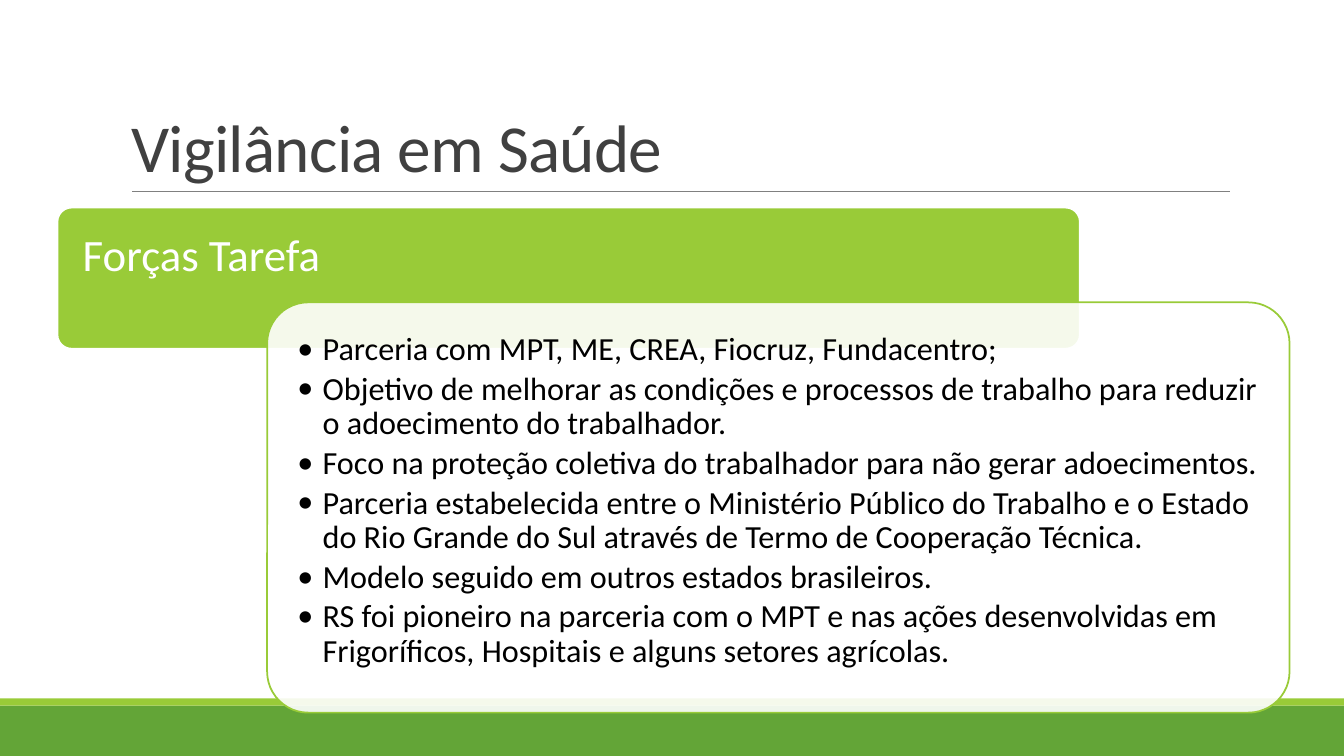
from lxml import etree
from pptx import Presentation
from pptx.dml.color import RGBColor
from pptx.enum.shapes import MSO_CONNECTOR, MSO_SHAPE
from pptx.enum.text import MSO_ANCHOR, MSO_AUTO_SIZE, PP_ALIGN
from pptx.oxml.ns import qn
from pptx.util import Inches, Pt

RECT, ROUNDED = MSO_SHAPE.RECTANGLE, MSO_SHAPE.ROUNDED_RECTANGLE
STRAIGHT = MSO_CONNECTOR.STRAIGHT
TOP, BOTTOM = MSO_ANCHOR.TOP, MSO_ANCHOR.BOTTOM
LEFT, NO_FIT = PP_ALIGN.LEFT, MSO_AUTO_SIZE.NONE

DARK_GREEN = RGBColor(0x63, 0xA5, 0x37)
GREEN = RGBColor(0x99, 0xCB, 0x38)
WHITE = RGBColor(0xFF, 0xFF, 0xFF)
BLACK = RGBColor(0, 0, 0)
CHARCOAL = RGBColor(0x40, 0x40, 0x40)
GREY = RGBColor(0x80, 0x80, 0x80)

SLIDE_W, SLIDE_H = 13.33, 7.5
FONT = "Calibri"
ACTIONS = [
    "Parceria com MPT, ME, CREA, Fiocruz, Fundacentro;",
    "Objetivo de melhorar as condições e processos de trabalho para reduzir "
    "o adoecimento do trabalhador.",
    "Foco na proteção coletiva do trabalhador para não gerar adoecimentos.",
    "Parceria estabelecida entre o Ministério Público do Trabalho e o Estado "
    "do Rio Grande do Sul através de Termo de Cooperação Técnica.",
    "Modelo seguido em outros estados brasileiros.",
    "RS foi pioneiro na parceria com o MPT e nas ações desenvolvidas em "
    "Frigoríficos, Hospitais e alguns setores agrícolas.",
]


def add_bullet(p, indent):
    pPr = p._p.get_or_add_pPr()
    pPr.set("marL", str(Inches(indent)))
    pPr.set("indent", str(-Inches(indent)))
    etree.SubElement(pPr, qn("a:buFont")).set("typeface", FONT)
    etree.SubElement(pPr, qn("a:buChar")).set("char", "•")


def write(sp, paragraphs, *, size, color, insets, anchor=TOP, line=0.9,
          after=0, bullet_indent=0, tracking=0):
    tf = sp.text_frame
    tf.word_wrap, tf.auto_size, tf.vertical_anchor = True, NO_FIT, anchor
    (tf.margin_left, tf.margin_top,
     tf.margin_right, tf.margin_bottom) = map(Inches, insets)
    for i, text in enumerate(paragraphs):
        p = tf.add_paragraph() if i else tf.paragraphs[0]
        if bullet_indent:
            add_bullet(p, bullet_indent)
        p.alignment, p.line_spacing = LEFT, line
        p.space_before, p.space_after = Pt(0), Pt(after)
        r = p.add_run()
        r.text = text
        r.font.name, r.font.size = FONT, Pt(size)
        r.font.color.rgb = color
        if tracking:
            r._r.get_or_add_rPr().set("spc", str(int(tracking * 100)))


def add_panel(s, kind, box, fill, line=None, alpha=None):
    sp = s.shapes.add_shape(kind, *map(Inches, box))
    sp.shadow.inherit = False
    sp.fill.solid()
    sp.fill.fore_color.rgb = fill
    if alpha is not None:
        color = sp.fill._xPr.find(".//" + qn("a:srgbClr"))
        etree.SubElement(color, qn("a:alpha")).set("val", str(alpha * 1000))
    if kind == ROUNDED:
        sp.adjustments[0] = 0.1
    if line is None:
        sp.line.fill.background()
    else:
        sp.line.color.rgb = line
        sp.line.width = Pt(1.25)


def add_text(s, box, paragraphs, **fmt):
    write(s.shapes.add_textbox(*map(Inches, box)), paragraphs, **fmt)


def add_footer_bands(s, top):
    stripe = 0.07
    add_panel(s, RECT, (0, top, SLIDE_W, SLIDE_H - top), DARK_GREEN)
    add_panel(s, RECT, (0, top - stripe, SLIDE_W, stripe), GREEN)


def add_title(s, box, text):
    x, y, w, h = box
    title = s.shapes.title
    title.left, title.top, title.width, title.height = map(Inches, box)
    write(title, [text], size=48, color=CHARCOAL, anchor=BOTTOM, line=0.85,
          insets=(0.1, 0.05, 0.1, 0.05), tracking=-0.5)
    # Rule under the title
    rule = s.shapes.add_connector(STRAIGHT, Inches(x + 0.11), Inches(y + h),
                                  Inches(x + w), Inches(y + h))
    rule.line.color.rgb = GREY
    rule.line.width = Pt(0.5)
    etree.SubElement(rule._element.spPr, qn("a:effectLst"))


def add_topic(s, box, heading, items):
    x, y, w, h = box
    card_w = 10.14
    # Green heading panel
    add_panel(s, ROUNDED, (x, y, card_w, 1.4), GREEN, WHITE)
    add_text(s, (x, y, card_w, 0.93), [heading], size=32, color=WHITE,
             insets=(0.25, 0.25, 0.25, 0.13))
    # Translucent card, set against the lower right corner
    card_x, card_y, pad = x + w - card_w, y + 0.94, 0.12
    card_h = y + h - card_y
    add_panel(s, ROUNDED, (card_x, card_y, card_w, card_h), WHITE, GREEN, 90)
    add_text(s, (card_x + pad, card_y + pad, card_w - 2 * pad,
                 card_h - 2 * pad), items, size=23, color=BLACK,
             insets=[0.18] * 4, after=3.45, bullet_indent=0.25)


def main():
    prs = Presentation()
    prs.slide_width, prs.slide_height = Inches(SLIDE_W), Inches(SLIDE_H)
    s = prs.slides.add_slide(prs.slide_layouts[5])
    add_footer_bands(s, 7)
    add_title(s, (1.2, 0.31, 11, 1.59), "Vigilância em Saúde")
    add_topic(s, (0.57, 2.06, 12.22, 5.01), "Forças Tarefa", ACTIONS)
    prs.save("out.pptx")


if __name__ == "__main__":
    main()
